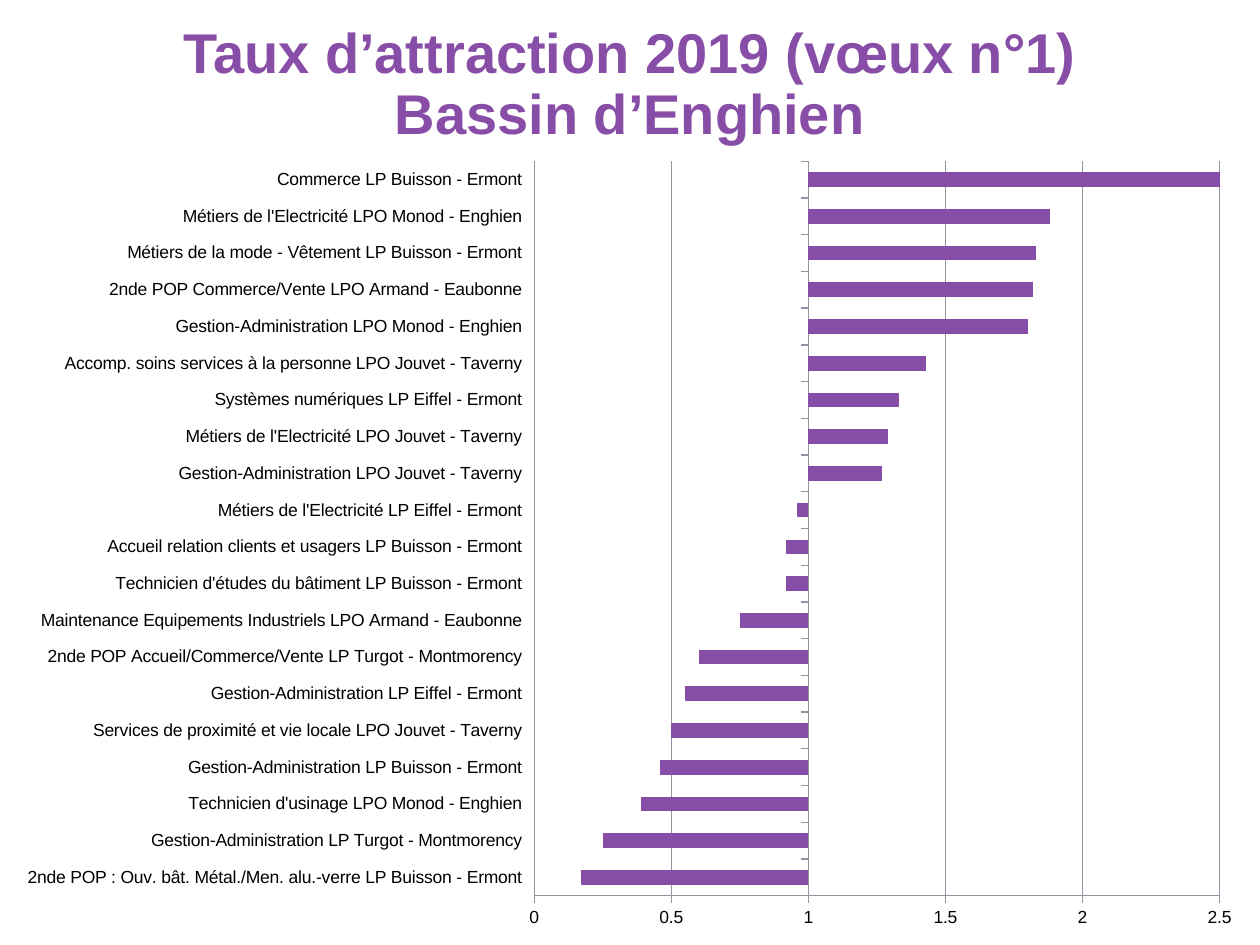
from typing import NamedTuple

from lxml.etree import SubElement
from pptx import Presentation
from pptx.chart.data import CategoryChartData
from pptx.dml.color import RGBColor
from pptx.enum.chart import XL_CHART_TYPE, XL_TICK_LABEL_POSITION, XL_TICK_MARK
from pptx.enum.text import MSO_ANCHOR, PP_ALIGN
from pptx.oxml.ns import qn
from pptx.util import Inches, Pt

PURPLE = "884DA7"
GREY = "9293A3"
BLACK = "000000"
WHITE = "FFFFFF"
FONT = "Arial"


class Box(NamedTuple):
    left: float
    top: float
    width: float
    height: float

    def lengths(self):
        return [Inches(value) for value in self]


class Course(NamedTuple):
    name: str
    rate: float


TITLE_BOX = Box(0, 0.21, 10, 0.94)
CHART_BOX = Box(0.02, 1.15, 9.96, 6.34)
PLOT_BOX = Box(4.24, 1.28, 5.44, 5.83)
TITLE_LINES = ["Taux d’attraction 2019 (vœux n°1)", "Bassin d’Enghien"]
COURSES = [
    Course("2nde POP : Ouv. bât. Métal./Men. alu.-verre LP Buisson - Ermont", 0.17),
    Course("Gestion-Administration LP Turgot - Montmorency", 0.25),
    Course("Technicien d'usinage LPO Monod - Enghien", 0.39),
    Course("Gestion-Administration LP Buisson - Ermont", 0.46),
    Course("Services de proximité et vie locale LPO Jouvet - Taverny", 0.5),
    Course("Gestion-Administration LP Eiffel - Ermont", 0.55),
    Course("2nde POP Accueil/Commerce/Vente LP Turgot - Montmorency", 0.6),
    Course("Maintenance Equipements Industriels LPO Armand - Eaubonne", 0.75),
    Course("Technicien d'études du bâtiment LP Buisson - Ermont", 0.92),
    Course("Accueil relation clients et usagers LP Buisson - Ermont", 0.92),
    Course("Métiers de l'Electricité LP Eiffel - Ermont", 0.96),
    Course("Gestion-Administration LPO Jouvet - Taverny", 1.27),
    Course("Métiers de l'Electricité LPO Jouvet - Taverny", 1.29),
    Course("Systèmes numériques LP Eiffel - Ermont", 1.33),
    Course("Accomp. soins services à la personne LPO Jouvet - Taverny", 1.43),
    Course("Gestion-Administration LPO Monod - Enghien", 1.8),
    Course("2nde POP Commerce/Vente LPO Armand - Eaubonne", 1.82),
    Course("Métiers de la mode - Vêtement LP Buisson - Ermont", 1.83),
    Course("Métiers de l'Electricité LPO Monod - Enghien", 1.88),
    Course("Commerce LP Buisson - Ermont", 2.5),
]


def color(value: str) -> RGBColor:
    return RGBColor.from_string(value)


def style_font(font, size: float, value: str, bold: bool = False) -> None:
    font.name = FONT
    font.size = Pt(size)
    font.bold = bold
    font.color.rgb = color(value)


def style_line(line) -> None:
    line.color.rgb = color(GREY)
    line.width = Pt(0.75)


def add_title(slide, box: Box, lines: list[str]) -> None:
    frame = slide.shapes.add_textbox(*box.lengths()).text_frame
    frame.word_wrap = True
    frame.vertical_anchor = MSO_ANCHOR.MIDDLE
    for index, text in enumerate(lines):
        paragraph = frame.add_paragraph() if index else frame.paragraphs[0]
        paragraph.alignment = PP_ALIGN.CENTER
        paragraph.line_spacing = 0.9
        run = paragraph.add_run()
        run.text = text
        style_font(run.font, 32, PURPLE, bold=True)


def place_plot(chart, chart_box: Box, plot_box: Box) -> None:
    plot_area = chart.plots[0]._element.getparent()
    for layout in plot_area.findall(qn("c:layout")):
        plot_area.remove(layout)
    layout = SubElement(plot_area, qn("c:layout"))
    plot_area.insert(0, layout)
    manual = SubElement(layout, qn("c:manualLayout"))
    settings = {
        "layoutTarget": "inner",
        "xMode": "edge",
        "yMode": "edge",
        "x": (plot_box.left - chart_box.left) / chart_box.width,
        "y": (plot_box.top - chart_box.top) / chart_box.height,
        "w": plot_box.width / chart_box.width,
        "h": plot_box.height / chart_box.height,
    }
    for name, value in settings.items():
        SubElement(manual, qn(f"c:{name}")).set("val", str(value))
    properties = SubElement(plot_area, qn("c:spPr"))
    fill = SubElement(properties, qn("a:solidFill"))
    SubElement(fill, qn("a:srgbClr")).set("val", WHITE)


def add_rate_chart(slide, box: Box, courses: list[Course]) -> None:
    data = CategoryChartData()
    data.categories = [course.name for course in courses]
    data.add_series("Series 1", [course.rate for course in courses])
    frame = slide.shapes.add_chart(
        XL_CHART_TYPE.BAR_CLUSTERED, *box.lengths(), data
    )
    chart = frame.chart
    chart.has_legend = False
    chart.has_title = False
    style_font(chart.font, 10, BLACK)

    plot = chart.plots[0]
    plot.gap_width = 150
    plot.vary_by_categories = False
    fill = plot.series[0].format.fill
    fill.solid()
    fill.fore_color.rgb = color(PURPLE)

    for axis in (chart.category_axis, chart.value_axis):
        axis.major_tick_mark = XL_TICK_MARK.OUTSIDE
        axis.minor_tick_mark = XL_TICK_MARK.NONE
        style_line(axis.format.line)
    chart.category_axis.tick_label_position = XL_TICK_LABEL_POSITION.LOW
    value_axis = chart.value_axis
    value_axis.minimum_scale = 0
    value_axis.maximum_scale = 2.5
    value_axis.major_unit = 0.5
    value_axis.crosses_at = 1
    value_axis.has_major_gridlines = True
    style_line(value_axis.major_gridlines.format.line)
    value_axis.tick_labels.number_format = "General"
    value_axis.tick_labels.number_format_is_linked = False
    place_plot(chart, box, PLOT_BOX)


def main() -> None:
    presentation = Presentation()
    presentation.slide_width = Inches(10)
    presentation.slide_height = Inches(7.5)
    slide = presentation.slides.add_slide(presentation.slide_layouts[6])
    add_title(slide, TITLE_BOX, TITLE_LINES)
    add_rate_chart(slide, CHART_BOX, COURSES)
    presentation.save("out.pptx")


if __name__ == "__main__":
    main()
